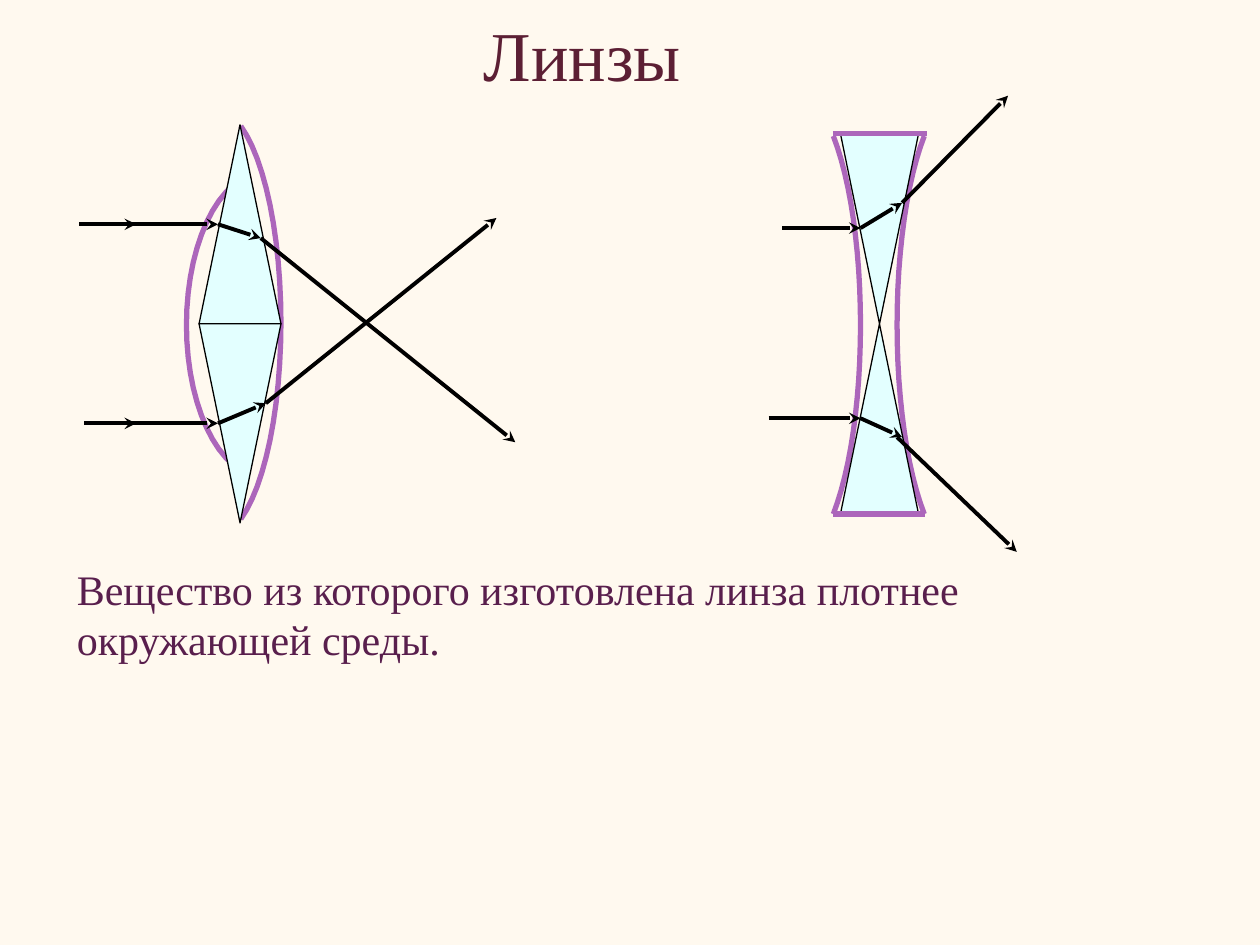
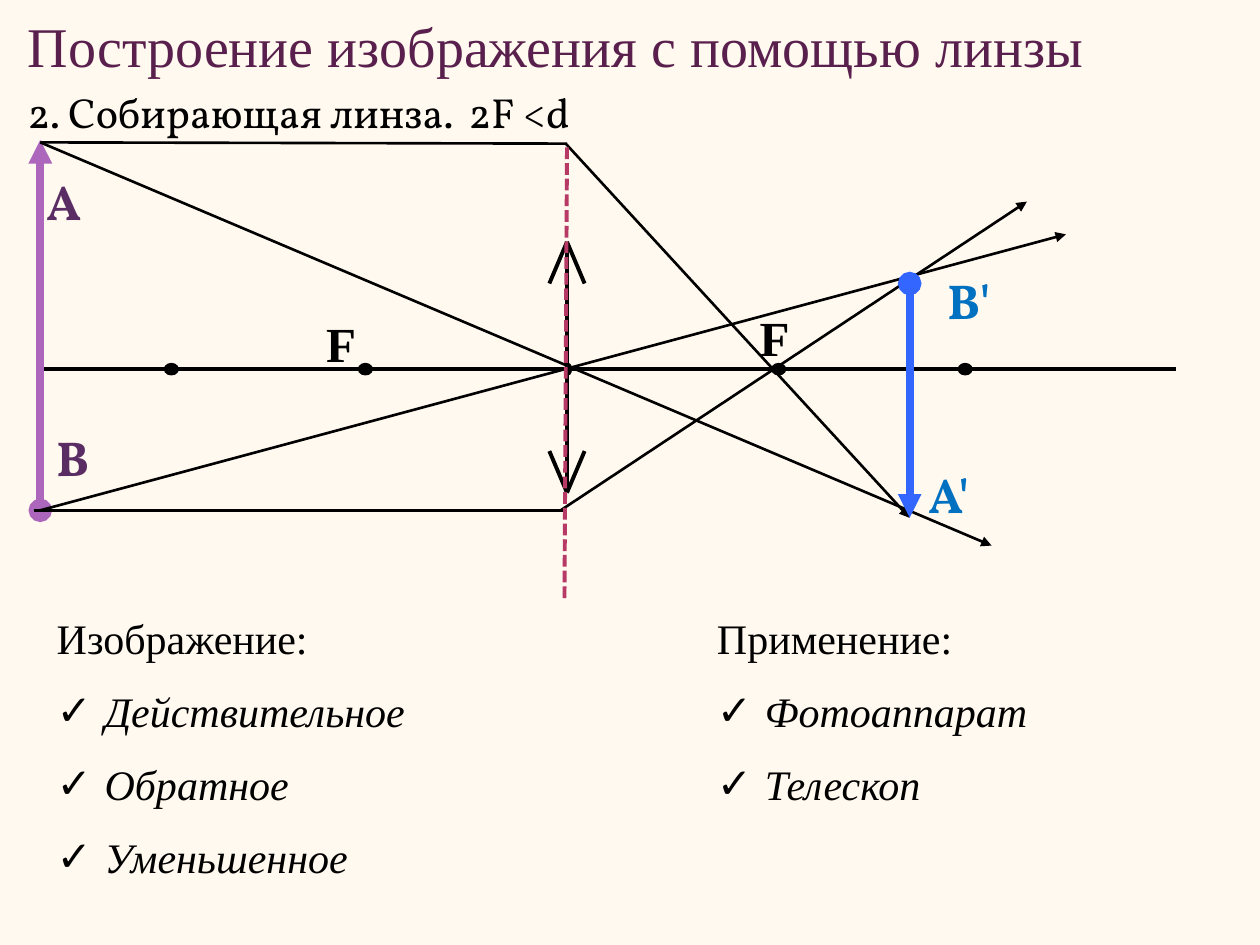
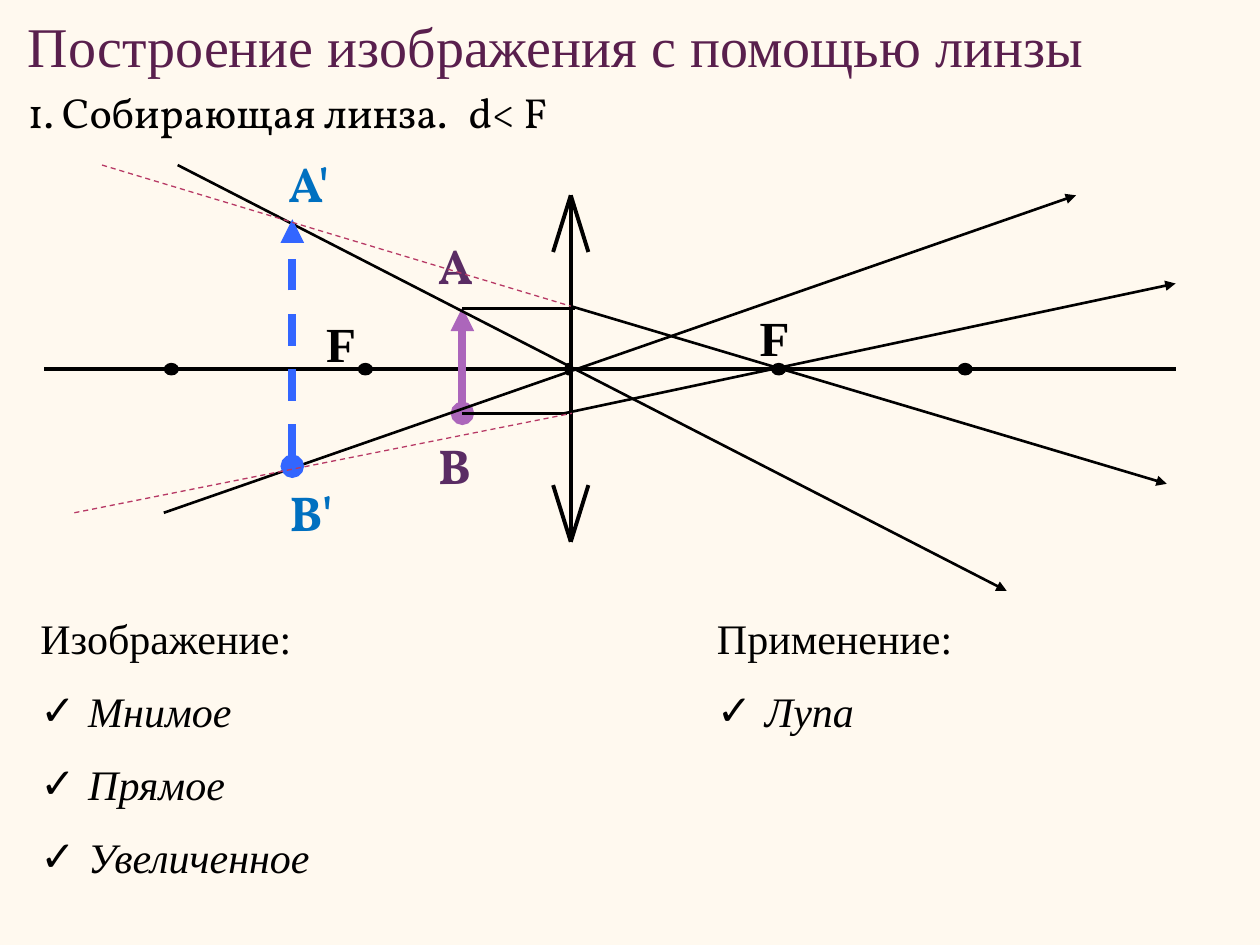
from math import asin, cos, sin

from lxml.etree import SubElement
from pptx import Presentation
from pptx.dml.color import RGBColor
from pptx.enum.dml import MSO_LINE
from pptx.enum.shapes import MSO_CONNECTOR, MSO_SHAPE
from pptx.enum.text import MSO_ANCHOR, MSO_AUTO_SIZE, PP_ALIGN
from pptx.oxml.ns import qn
from pptx.util import Emu, Inches, Pt

COLORS = {
    "background": "FFF9EF",
    "heading": "5C1F34",
    "title": "591F4D",
    "ink": "000000",
    "glass": "E3FFFF",
    "edge": "AC66BB",
    "object": "5A2C64",
    "image": "0070C0",
    "image_arrow": "3366FF",
    "extension": "B73965",
}
SERIF = "Times New Roman"
DISPLAY = "Vollkorn"

presentation = Presentation()
presentation.slide_width = Inches(10)
presentation.slide_height = Inches(7.5)
column = presentation.slide_width / 10
row = presentation.slide_height / 7.5
background = presentation.slide_master.background.fill
background.solid()
background.fore_color.rgb = RGBColor.from_string(COLORS["background"])


def place_text(shape, box, text, size, color, font=SERIF, bold=False):
    left, top, width, height = box
    shape.left, shape.width = Emu(round(left * column)), Emu(round(width * column))
    shape.top, shape.height = Emu(round(top * row)), Emu(round(height * row))
    frame = shape.text_frame
    frame.text = text
    frame.word_wrap = True
    frame.auto_size = MSO_AUTO_SIZE.NONE
    frame.vertical_anchor = MSO_ANCHOR.TOP
    if shape.is_placeholder:
        frame.margin_top = Inches(0.09)
    for index, paragraph in enumerate(frame.paragraphs):
        properties = paragraph._p.get_or_add_pPr()
        indent = Inches(0.38) if index else 0
        properties.set("marL", str(indent))
        properties.set("indent", str(-indent))
        if index:
            SubElement(properties, qn("a:buChar"), char="✓")
        else:
            SubElement(properties, qn("a:buNone"))
        if "\t" in text:
            tabs = SubElement(properties, qn("a:tabLst"))
            SubElement(tabs, qn("a:tab"), pos=str(Inches(4.1)), algn="l")
        paragraph.alignment = PP_ALIGN.LEFT
        paragraph.space_before = Pt(13 if index else 0)
        paragraph.font.name = font
        paragraph.font.size = Pt(size)
        paragraph.font.bold = bold
        paragraph.font.italic = index > 0
        paragraph.font.color.rgb = RGBColor.from_string(COLORS[color])


def draw_line(slide, ends, color="ink", width=2.25, head=None, tail=None, dash=None):
    x1, y1, x2, y2 = ends
    connector = slide.shapes.add_connector(
        MSO_CONNECTOR.STRAIGHT,
        round(x1 * column), round(y1 * row), round(x2 * column), round(y2 * row))
    connector.line.color.rgb = RGBColor.from_string(COLORS[color])
    connector.line.width = Pt(width)
    if dash:
        connector.line.dash_style = dash
    outline = connector.line._get_or_add_ln()
    for tag, arrowhead in (("a:headEnd", head), ("a:tailEnd", tail)):
        if arrowhead:
            SubElement(outline, qn(tag), type=arrowhead)
    SubElement(connector._element.spPr, qn("a:effectLst"))


slide = presentation.slides.add_slide(presentation.slide_layouts[1])
place_text(slide.shapes.title, (3.74, 0, 2.12, 0.77), "Линзы", 40, "heading")
place_text(slide.placeholders[1], (0.51, 4.38, 8.07, 0.91),
           "Вещество из которого изготовлена линза плотнее окружающей среды.", 24, "title")

lens_edges = [
    (2.23, 2.56, 1.56, 0.53, 1.7),
    (1.48, 2.58, 1.15, -0.6, 1.2),
    (6.83, 2.58, 1.5, 0.52, 1.85),
    (7.12, 2.58, 1.5, -0.52, 1.85),
]
steps = 24
for vertex, middle, half_height, radius_x, radius_y in lens_edges:
    span = asin(half_height / radius_y)
    angles = [span * (2 * step / steps - 1) for step in range(steps + 1)]
    points = [((vertex + radius_x * (cos(angle) - 1)) * column,
               (middle + radius_y * sin(angle)) * row) for angle in angles]
    builder = slide.shapes.build_freeform(*points[0])
    builder.add_line_segments(points[1:], close=False)
    edge = builder.convert_to_shape()
    edge.shadow.inherit = False
    edge.fill.background()
    edge.line.color.rgb = RGBColor.from_string(COLORS["edge"])
    edge.line.width = Pt(3)

prisms = [
    (1.58, 0.99, 0.65, 1.58, 0),
    (1.58, 2.57, 0.65, 1.58, 180),
    (6.67, 2.57, 0.62, 1.51, 0),
    (6.67, 1.06, 0.62, 1.51, 180),
]
for left, top, width, height, rotation in prisms:
    prism = slide.shapes.add_shape(
        MSO_SHAPE.ISOSCELES_TRIANGLE,
        round(left * column), round(top * row), round(width * column), round(height * row))
    prism.rotation = rotation
    prism.shadow.inherit = False
    prism.fill.solid()
    prism.fill.fore_color.rgb = RGBColor.from_string(COLORS["glass"])
    prism.line.color.rgb = RGBColor.from_string(COLORS["ink"])
    prism.line.width = Pt(0.75)

for rim in [(6.61, 4.08, 7.34, 4.08), (6.61, 1.06, 7.36, 1.06)]:
    draw_line(slide, rim, "edge", 3)

light_paths = [
    [(0.63, 1.78), (1.73, 1.78), (2.07, 1.89), (4.09, 3.51)],
    [(0.67, 3.36), (1.73, 3.36), (2.11, 3.2), (3.94, 1.73)],
    [(0.63, 1.78), (1.08, 1.78)],
    [(0.67, 3.36), (1.08, 3.36)],
    [(6.21, 1.81), (6.83, 1.81), (7.16, 1.61), (8, 0.76)],
    [(6.1, 3.32), (6.83, 3.32), (7.16, 3.47)],
    [(7.12, 3.47), (8.07, 4.38)],
]
for light_path in light_paths:
    for start, end in zip(light_path, light_path[1:]):
        draw_line(slide, start + end, tail="stealth")

constructions = [
    {
        "condition": "2. Собирающая линза.\t2F <d",
        "lens": (4.5, 1.92, 3.91, 0.33),
        "object": (0.32, 1.11, 0.32, 4.05),
        "image": (7.22, 2.25, 7.22, 4.11),
        "image_dash": None,
        "parallel_rays": [(0.32, 1.13, 4.5, 1.14), (0.27, 4.05, 4.5, 4.05)],
        "rays": [(0.32, 1.13, 7.87, 4.33), (0.32, 4.05, 8.46, 1.86),
                 (4.45, 4.05, 8.15, 1.6), (4.49, 1.14, 7.22, 4.11)],
        "extensions": [(4.5, 1.17, 4.48, 4.77)],
        "extension_style": (2.25, MSO_LINE.SQUARE_DOT),
        "labels": [("A", 0.27, 1.31, "object"), ("B", 0.35, 3.34, "object"),
                   ("A'", 7.27, 3.64, "image"), ("B'", 7.42, 2.1, "image")],
        "list_left": 0.35,
        "properties": "Изображение:\nДействительное\nОбратное\nУменьшенное",
        "uses": "Применение:\nФотоаппарат\nТелескоп",
    },
    {
        "condition": "1. Собирающая линза.\td< F",
        "lens": (4.53, 1.55, 4.3, 0.45),
        "object": (3.67, 2.44, 3.67, 3.28),
        "image": (2.32, 3.7, 2.32, 1.74),
        "image_dash": MSO_LINE.DASH,
        "parallel_rays": [(3.67, 2.45, 4.56, 2.45), (3.67, 3.28, 4.5, 3.28)],
        "rays": [(1.41, 1.31, 7.99, 4.69), (1.3, 4.07, 8.54, 1.55),
                 (4.48, 3.28, 9.33, 2.25), (4.53, 2.43, 9.26, 3.84)],
        "extensions": [(0.59, 4.07, 4.54, 3.28), (0.81, 1.31, 4.53, 2.43)],
        "extension_style": (0.75, MSO_LINE.DASH),
        "labels": [("A", 3.38, 1.82, "object"), ("B", 3.38, 3.41, "object"),
                   ("A'", 2.19, 1.17, "image"), ("B'", 2.2, 3.78, "image")],
        "list_left": 0.22,
        "properties": "Изображение:\nМнимое\nПрямое\nУвеличенное",
        "uses": "Применение:\nЛупа",
    },
]
axis_y = 2.93
axis_points = [(1.36, 0.11), (2.9, 0.11), (4.51, 0.05), (6.18, 0.11), (7.66, 0.11)]

for construction in constructions:
    slide = presentation.slides.add_slide(presentation.slide_layouts[3])
    place_text(slide.shapes.title, (0.12, 0, 9.76, 0.64),
               "Построение изображения с помощью линзы", 32, "title")
    place_text(slide.placeholders[1], (construction["list_left"], 4.77, 3.94, 2.7),
               construction["properties"], 24, "ink")
    place_text(slide.placeholders[2], (5.59, 4.77, 3.94, 2.32),
               construction["uses"], 24, "ink")
    place_text(slide.shapes.add_textbox(0, 0, 0, 0), (0.12, 0.64, 7.11, 0.5),
               construction["condition"], 24, "ink", DISPLAY)

    lens_x, lens_top, lens_bottom, barb = construction["lens"]
    draw_line(slide, (lens_x, lens_top, lens_x, lens_bottom))
    for tip, drop in ((lens_top, barb), (lens_bottom, -barb)):
        for spread in (-0.14, 0.14):
            draw_line(slide, (lens_x, tip, lens_x + spread, tip + drop))

    draw_line(slide, (0.35, axis_y, 9.33, axis_y))
    for center, width in axis_points:
        point = slide.shapes.add_shape(
            MSO_SHAPE.OVAL, round((center - width / 2) * column),
            round((axis_y - 0.045) * row), round(width * column), round(0.09 * row))
        point.shadow.inherit = False
        point.fill.solid()
        point.fill.fore_color.rgb = RGBColor.from_string(COLORS["ink"])
        point.line.color.rgb = RGBColor.from_string(COLORS["ink"])
        point.line.width = Pt(0.75)

    draw_line(slide, construction["object"], "edge", 4.5, "triangle", "oval")
    for ray in construction["parallel_rays"]:
        draw_line(slide, ray, width=1.5)
    for ray in construction["rays"]:
        draw_line(slide, ray, width=1.5, tail="triangle")
    draw_line(slide, construction["image"], "image_arrow", 4.5, "oval", "triangle",
              construction["image_dash"])

    for left, top in ((2.49, 2.44), (5.93, 2.39)):
        place_text(slide.shapes.add_textbox(0, 0, 0, 0), (left, top, 0.59, 0.57),
                   "F", 28, "ink", bold=True)
    for text, left, top, color in construction["labels"]:
        place_text(slide.shapes.add_textbox(0, 0, 0, 0), (left, top, 0.76, 0.57),
                   text, 28, color, DISPLAY, True)

    extension_width, extension_dash = construction["extension_style"]
    for extension in construction["extensions"]:
        draw_line(slide, extension, "extension", extension_width, dash=extension_dash)

presentation.save("out.pptx")
